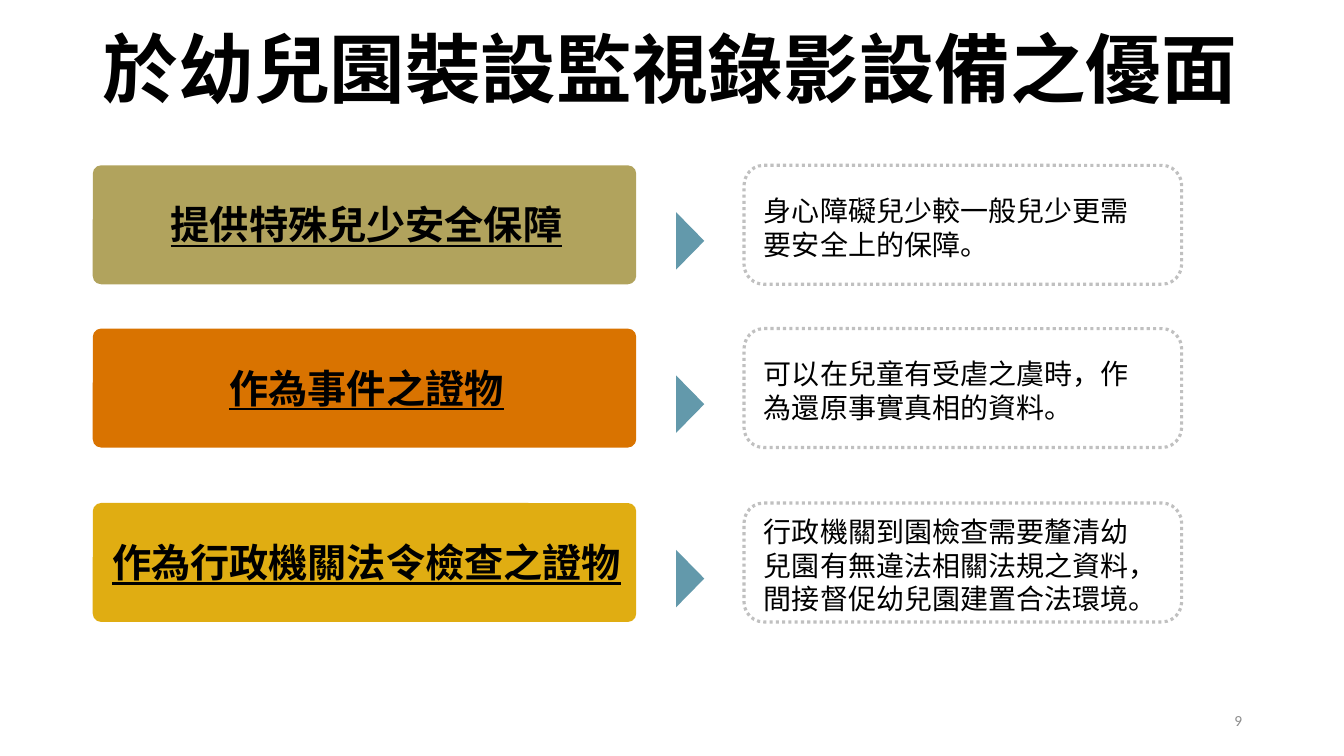
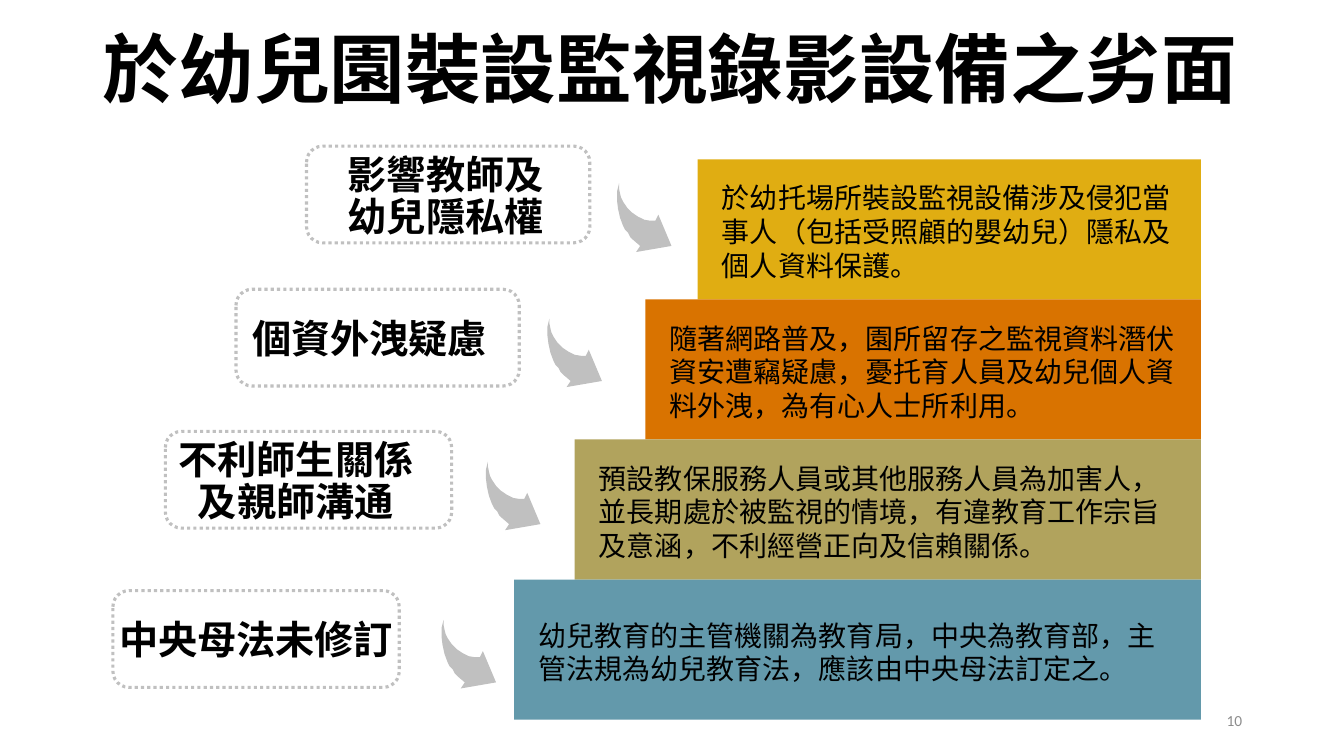
from dataclasses import dataclass

from lxml import etree
from pptx import Presentation
from pptx import util as u
from pptx.dml.color import RGBColor
from pptx.enum import dml, shapes, text
from pptx.oxml.ns import qn


@dataclass(frozen=True)
class Theme:
    font: str = "Noto Sans CJK SC"
    num_font: str = "Calibri"
    ink: str = "000000"
    gray: str = "8C8C8C"
    dot: str = "C0C0C0"
    blue: str = "6399AB"
    olive: str = "B1A35D"
    orange: str = "D97300"
    gold: str = "E0AD12"
    title: int = 54
    label: int = 28
    body: int = 20
    num: int = 11


@dataclass(frozen=True)
class Box:
    x: float
    y: float
    w: float
    h: float


@dataclass(frozen=True)
class Style:
    size: int
    bold: bool = False
    under: bool = False
    align: text.PP_ALIGN = text.PP_ALIGN.LEFT
    space: float = 1.0
    color: str = Theme.ink
    font: str = Theme.font


@dataclass(frozen=True)
class Pad:
    left: float = 0
    right: float = 0
    top: float = 0


@dataclass(frozen=True)
class Merit:
    y: float
    fill: str
    head: str
    note: str


@dataclass(frozen=True)
class Flaw:
    head: str
    note: str
    fill: str
    label: Box
    pad: Pad
    arrow: tuple[float, float]
    step: float


T = Theme()
MID = text.PP_ALIGN.CENTER
TITLE = Style(T.title, bold=True, space=0.9)
HEAD = Style(T.label, bold=True, align=MID, space=0.9)
LINK = Style(T.label, bold=True, under=True, align=MID, space=0.9)
BODY = Style(T.body)
NUM = Style(T.num, align=text.PP_ALIGN.RIGHT, color=T.gray, font=T.num_font)

RECT = shapes.MSO_SHAPE.RECTANGLE
ROUND = shapes.MSO_SHAPE.ROUNDED_RECTANGLE
WEDGE = shapes.MSO_SHAPE.ISOSCELES_TRIANGLE

# Curved arrow outline, in hundredths of an inch
CURVE = [
    (23, 62), (19, 68), (54, 62), (41, 31), (38, 37), (33, 37), (27, 36),
    (21, 33), (15, 29), (13, 27), (10, 24), (8, 21), (6, 18), (4, 14),
    (3, 10), (2, 5), (2, 0), (1, 4), (0, 8), (0, 13), (0, 17), (1, 25),
    (3, 34), (6, 42), (8, 46), (11, 49), (13, 53), (16, 56),
]

MERITS = [
    Merit(1.64, T.olive, "提供特殊兒少安全保障",
          "身心障礙兒少較一般兒少更需要安全上的保障。"),
    Merit(3.26, T.orange, "作為事件之證物",
          "可以在兒童有受虐之虞時，作為還原事實真相的資料。"),
    Merit(4.99, T.gold, "作為行政機關法令檢查之證物",
          "行政機關到園檢查需要釐清幼兒園有無違法相關法規之資料，"
          "間接督促幼兒園建置合法環境。"),
]

FLAWS = [
    Flaw("影響教師及幼兒隱私權",
         "於幼托場所裝設監視設備涉及侵犯當事人（包括受照顧的嬰幼兒）"
         "隱私及個人資料保護。",
         T.gold, Box(3.04, 1.45, 2.81, 0.96), Pad(0.25, 0.3, 0.06),
         (6.12, 1.82), 6.92),
    Flaw("個資外洩疑慮",
         "隨著網路普及，園所留存之監視資料潛伏資安遭竊疑慮，"
         "憂托育人員及幼兒個人資料外洩，為有心人士所利用。",
         T.orange, Box(2.34, 2.87, 2.81, 0.96), Pad(0, 0.16, 0.06),
         (5.43, 3.16), 6.4),
    Flaw("不利師生關係\n及親師溝通",
         "預設教保服務人員或其他服務人員為加害人，"
         "並長期處於被監視的情境，有違教育工作宗旨及意涵，"
         "不利經營正向及信賴關係。",
         T.olive, Box(1.64, 4.28, 2.84, 0.96), Pad(0, 0.25, 0.06),
         (4.82, 4.58), 5.7),
    Flaw("中央母法未修訂",
         "幼兒教育的主管機關為教育局，中央為教育部，"
         "主管法規為幼兒教育法，應該由中央母法訂定之。",
         T.blue, Box(1.12, 5.86, 2.84, 0.96), Pad(top=0.06),
         (4.38, 6.15), 5.1),
]


def place(box: Box) -> tuple[u.Length, ...]:
    return tuple(u.Inches(v) for v in (box.x, box.y, box.w, box.h))


def write(shape, words: str, style: Style, pad: Pad) -> None:
    frame = shape.text_frame
    frame.text = words
    frame.word_wrap = True
    frame.auto_size = text.MSO_AUTO_SIZE.NONE
    frame.vertical_anchor = text.MSO_ANCHOR.MIDDLE
    frame.margin_left = u.Inches(pad.left)
    frame.margin_right = u.Inches(pad.right)
    frame.margin_top = u.Inches(pad.top)
    frame.margin_bottom = 0
    for para in frame.paragraphs:
        para.alignment = style.align
        para.line_spacing = style.space
        for run in para.runs:
            font = run.font
            font.size = u.Pt(style.size)
            font.bold = style.bold
            font.underline = style.under
            font.color.rgb = RGBColor.from_string(style.color)
            font.name = style.font
            east = etree.SubElement(run._r.get_or_add_rPr(), qn("a:ea"))
            east.set("typeface", style.font)


def paint(shape, fill: str) -> None:
    shape.shadow.inherit = False
    shape.fill.solid()
    shape.fill.fore_color.rgb = RGBColor.from_string(fill)
    shape.line.fill.background()


def block(slide, kind: shapes.MSO_SHAPE, box: Box, fill: str):
    shape = slide.shapes.add_shape(kind, *place(box))
    paint(shape, fill)
    return shape


def frame(slide, box: Box):
    """Add an unfilled rounded box with a dotted edge."""
    shape = slide.shapes.add_shape(ROUND, *place(box))
    shape.shadow.inherit = False
    shape.fill.background()
    shape.line.color.rgb = RGBColor.from_string(T.dot)
    shape.line.width = u.Pt(2.25)
    shape.line.dash_style = dml.MSO_LINE.ROUND_DOT
    return shape


def curve(slide, at: tuple[float, float]) -> None:
    pen = slide.shapes.build_freeform(*CURVE[0], scale=u.Inches(0.01))
    pen.add_line_segments(CURVE[1:], close=True)
    paint(pen.convert_to_shape(*(u.Inches(v) for v in at)), T.dot)


def start(deck, title: str, num: int):
    """Add a slide with its title and page number."""
    slide = deck.slides.add_slide(deck.slide_layouts[5])
    head = slide.shapes.title
    head.left, head.top, head.width, head.height = place(
        Box(0.92, 0.26, 11.5, 0.93))
    write(head, title, TITLE, Pad(0.1, 0.1))
    foot = slide.shapes.add_textbox(*place(Box(9.42, 6.95, 3, 0.4)))
    write(foot, str(num), NUM, Pad(0.1, 0.1))
    return slide


def merits(deck) -> None:
    slide = start(deck, "於幼兒園裝設監視錄影設備之優面", 9)
    high = 1.18
    for row in MERITS:
        bar = block(slide, ROUND, Box(0.92, row.y, 5.39, high), row.fill)
        bar.adjustments[0] = 0.07
        write(bar, row.head, LINK, Pad(0.12, 0.08, 0.05))
        mark = Box(6.56, row.y + high / 2 + 0.02, 0.57, 0.28)
        block(slide, WEDGE, mark, T.blue).rotation = 90
        note = frame(slide, Box(7.38, row.y, 4.34, high))
        write(note, row.note, BODY, Pad(0.14, 0.4, 0.05))


def flaws(deck) -> None:
    slide = start(deck, "於幼兒園裝設監視錄影設備之劣面", 10)
    top, high, right = 1.58, 1.39, 11.91
    for i, row in enumerate(FLAWS):
        box = Box(row.step, top + i * high, right - row.step, high)
        step = block(slide, RECT, box, row.fill)
        write(step, row.note, BODY, Pad(0.24, 0.24, 0.04))
        write(frame(slide, row.label), row.head, HEAD, row.pad)
        curve(slide, row.arrow)


def main() -> None:
    deck = Presentation()
    deck.slide_width = u.Inches(13.33)
    deck.slide_height = u.Inches(7.5)
    merits(deck)
    flaws(deck)
    deck.save("out.pptx")


if __name__ == "__main__":
    main()
